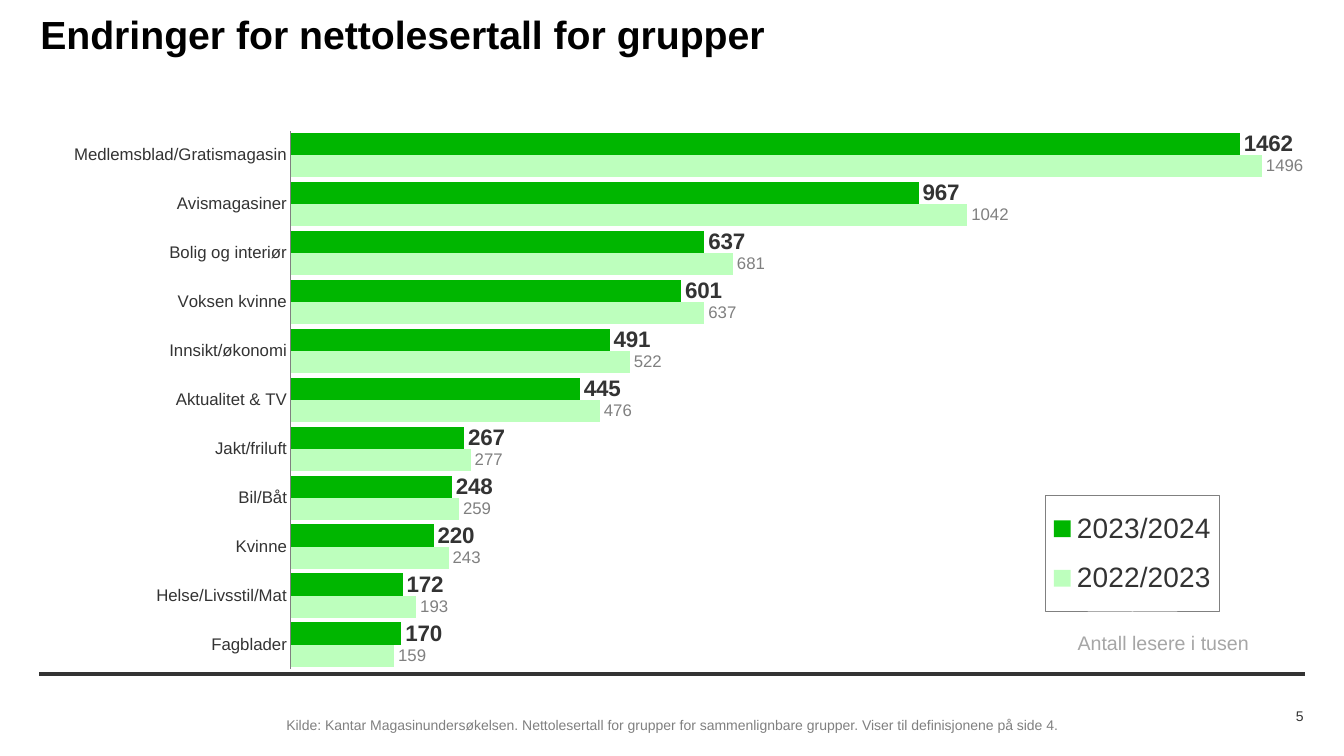
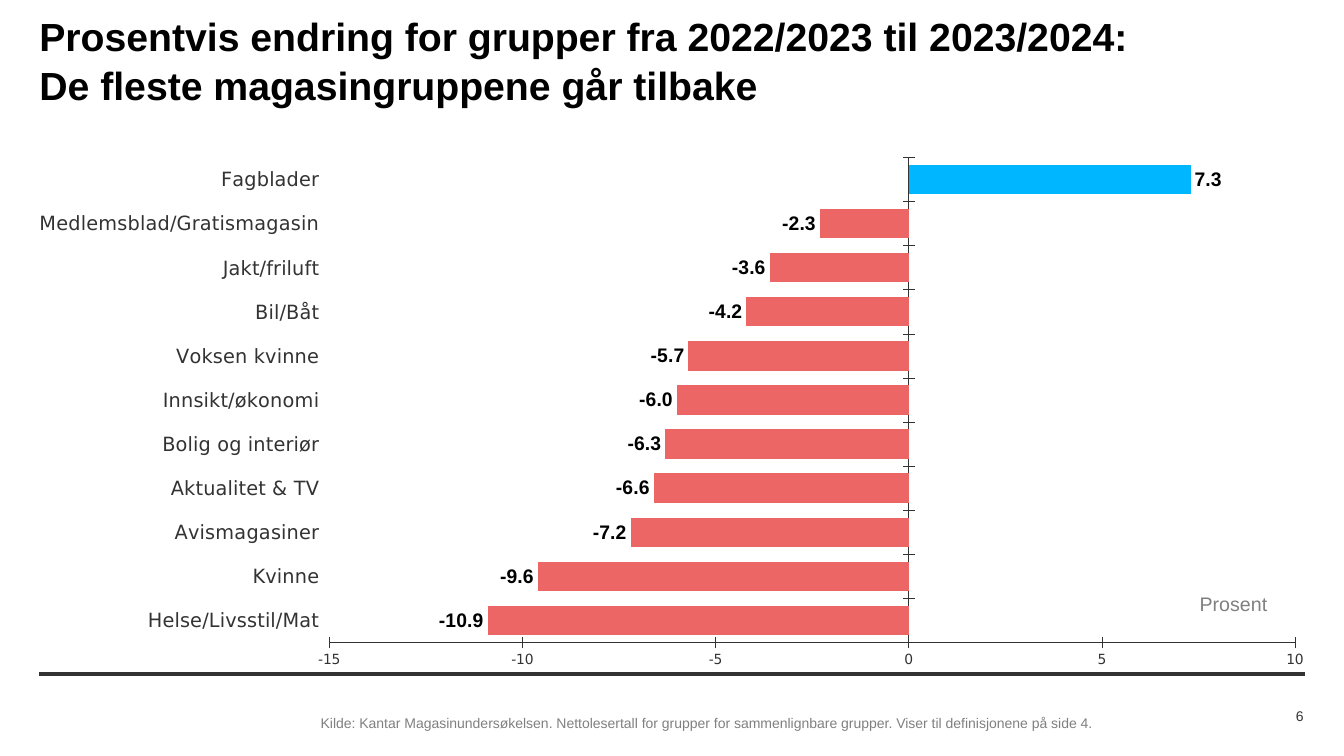
from typing import NamedTuple

from lxml import etree
from pptx import Presentation
from pptx.chart.data import CategoryChartData
from pptx.dml.color import RGBColor
from pptx.enum.chart import (XL_CHART_TYPE, XL_LABEL_POSITION, XL_LEGEND_POSITION,
                             XL_TICK_LABEL_POSITION, XL_TICK_MARK)
from pptx.enum.shapes import MSO_CONNECTOR
from pptx.enum.text import MSO_ANCHOR, PP_ALIGN
from pptx.oxml import parse_xml
from pptx.oxml.ns import nsdecls, qn
from pptx.util import Inches, Pt

BAR = XL_CHART_TYPE.BAR_CLUSTERED
OUTSIDE_END = XL_LABEL_POSITION.OUTSIDE_END
LEGEND_RIGHT = XL_LEGEND_POSITION.RIGHT
LABELS_LOW = XL_TICK_LABEL_POSITION.LOW
TICK_CROSS, TICK_NONE = XL_TICK_MARK.CROSS, XL_TICK_MARK.NONE
STRAIGHT = MSO_CONNECTOR.STRAIGHT
TOP, MIDDLE = MSO_ANCHOR.TOP, MSO_ANCHOR.MIDDLE
LEFT, RIGHT = PP_ALIGN.LEFT, PP_ALIGN.RIGHT

COLORS = {
    "title": "000000",
    "dark": "333333",
    "grey": "808080",
    "pale_grey": "A6A6A6",
    "current": "00B600",
    "previous": "BDFFBD",
    "decline": "ED6666",
    "growth": "00B6FF",
    "white": "FFFFFF",
}
FONT = "Arial"
AXIS_FONT = "DejaVu Sans"
TITLE_ONLY = 5
SOURCE = ("Kilde: Kantar Magasinundersøkelsen. Nettolesertall for grupper for "
          "sammenlignbare grupper. Viser til definisjonene på side 4.")

READERS = [
    ("Fagblader", 159, 170),
    ("Helse/Livsstil/Mat", 193, 172),
    ("Kvinne", 243, 220),
    ("Bil/Båt", 259, 248),
    ("Jakt/friluft", 277, 267),
    ("Aktualitet & TV", 476, 445),
    ("Innsikt/økonomi", 522, 491),
    ("Voksen kvinne", 637, 601),
    ("Bolig og interiør", 681, 637),
    ("Avismagasiner", 1042, 967),
    ("Medlemsblad/Gratismagasin", 1496, 1462),
]
CHANGES = [
    ("Helse/Livsstil/Mat", -10.9),
    ("Kvinne", -9.6),
    ("Avismagasiner", -7.2),
    ("Aktualitet & TV", -6.6),
    ("Bolig og interiør", -6.3),
    ("Innsikt/økonomi", -6),
    ("Voksen kvinne", -5.7),
    ("Bil/Båt", -4.2),
    ("Jakt/friluft", -3.6),
    ("Medlemsblad/Gratismagasin", -2.3),
    ("Fagblader", 7.3),
]


class Box(NamedTuple):
    left: int
    top: int
    width: int
    height: int

    def region(self, left, top, width, height):
        return Box(int(self.left + self.width * left / 100),
                   int(self.top + self.height * top / 100),
                   int(self.width * width / 100),
                   int(self.height * height / 100))


PAGE = Box(0, 0, Inches(13.33), Inches(7.5))


def rgb(name):
    return RGBColor.from_string(COLORS[name])


def style_font(font, size, color, bold=False, name=FONT):
    font.name = name
    font.size = Pt(size)
    font.bold = bold
    font.color.rgb = rgb(color)


def style_line(line, color, width):
    line.color.rgb = rgb(color)
    line.width = Pt(width)


def clear_margins(frame):
    frame.margin_left = frame.margin_right = 0
    frame.margin_top = frame.margin_bottom = 0


def add_text(slide, box, text, size, color, anchor=TOP, align=LEFT, inset=True, wrap=True):
    frame = slide.shapes.add_textbox(*box).text_frame
    frame.word_wrap = wrap
    frame.vertical_anchor = anchor
    if not inset:
        clear_margins(frame)
    frame.text = text
    paragraph = frame.paragraphs[0]
    paragraph.alignment = align
    style_font(paragraph.runs[0].font, size, color)


def add_title(slide, box, text):
    title = slide.shapes.title
    title.left, title.top, title.width, title.height = box
    frame = title.text_frame
    frame.word_wrap = True
    frame.vertical_anchor = TOP
    clear_margins(frame)
    frame.text = text
    paragraph = frame.paragraphs[0]
    paragraph.alignment = LEFT
    paragraph.line_spacing = 1.05
    for run in paragraph.runs:
        style_font(run.font, 28, "title", bold=True)


def add_footer(slide, source_box, page_number):
    rule = PAGE.region(2.93, 89.2, 94.14, 0)
    line = slide.shapes.add_connector(STRAIGHT, rule.left, rule.top,
                                      rule.left + rule.width, rule.top)
    style_line(line.line, "dark", 3)
    etree.SubElement(line.element.spPr, qn("a:effectLst"))
    add_text(slide, source_box, SOURCE, 10, "grey", anchor=MIDDLE, inset=False)
    add_text(slide, PAGE.region(89.05, 93.2, 7.95, 2.93), str(page_number), 10, "dark",
             anchor=MIDDLE, align=RIGHT, inset=False)


def set_layout(parent, index, shares, inner=False):
    for old in parent.findall(qn("c:layout")):
        parent.remove(old)
    target = '<c:layoutTarget val="inner"/>' if inner else ""
    modes = "".join(f'<c:{axis}Mode val="edge"/>' for axis in "xy")
    sizes = "".join(f'<c:{key} val="{share / 100}"/>' for key, share in zip("xywh", shares))
    parent.insert(index, parse_xml(
        f'<c:layout {nsdecls("c")}><c:manualLayout>{target}{modes}{sizes}'
        "</c:manualLayout></c:layout>"))


def add_bar_chart(slide, box, rows, names, gap, limits, plot_shares, number_format):
    data = CategoryChartData(number_format=number_format)
    categories, *columns = zip(*rows)
    data.categories = categories
    for name, values in zip(names, columns):
        data.add_series(name, values)
    chart = slide.shapes.add_chart(BAR, *box, data).chart
    style_font(chart.font, 14, "dark")
    chart.has_title = False
    chart.has_legend = False
    plot = chart.plots[0]
    plot.gap_width = gap
    plot.overlap = 0
    plot.vary_by_categories = False
    axis = chart.value_axis
    axis.minimum_scale, axis.maximum_scale = limits
    axis.has_major_gridlines = False
    chart.category_axis.has_major_gridlines = False
    set_layout(chart.element.find(".//" + qn("c:plotArea")), 0, plot_shares, inner=True)
    return chart


def style_series(series, fill, size, color, number_format, bold=False):
    series.invert_if_negative = False
    series.format.fill.solid()
    series.format.fill.fore_color.rgb = rgb(fill)
    labels = series.data_labels
    labels.show_value = True
    labels.position = OUTSIDE_END
    labels.number_format = number_format
    labels.number_format_is_linked = False
    style_font(labels.font, size, color, bold)


def add_legend(chart, shares):
    chart.has_legend = True
    legend = chart.legend
    legend.position = LEGEND_RIGHT
    legend.include_in_layout = True
    style_font(legend.font, 20, "dark")
    element = chart.element.find(".//" + qn("c:legend"))
    set_layout(element, 1, shares)
    element.find(qn("c:overlay")).addnext(parse_xml(
        f'<c:spPr {nsdecls("c", "a")}><a:solidFill><a:srgbClr val="{COLORS["white"]}"/>'
        f'</a:solidFill><a:ln w="{Pt(0.75)}"><a:solidFill><a:srgbClr val="{COLORS["grey"]}"/>'
        "</a:solidFill></a:ln></c:spPr>"))


def add_readers_chart(slide, box):
    chart = add_bar_chart(slide, box, READERS, ("2022/2023", "2023/2024"), 20,
                          (0, 1560), (19.9, 0, 80.1, 98.7), "0")
    chart.value_axis.visible = False
    axis = chart.category_axis
    axis.major_tick_mark = TICK_NONE
    style_font(axis.tick_labels.font, 12, "dark")
    style_line(axis.format.line, "grey", 0.75)
    previous, current = chart.plots[0].series
    style_series(previous, "previous", 12, "grey", "0")
    style_series(current, "current", 16, "dark", "0", bold=True)
    add_legend(chart, (79.56, 66.8, 13.8, 21.4))


def add_changes_chart(slide, box):
    chart = add_bar_chart(slide, box, CHANGES, ("Endring",), 50,
                          (-15, 10), (21.75, 0, 77.6, 94.4), "0.0")
    chart.value_axis.major_unit = 5
    for axis, size in ((chart.category_axis, 14), (chart.value_axis, 10)):
        axis.major_tick_mark = TICK_CROSS
        style_font(axis.tick_labels.font, size, "dark", name=AXIS_FONT)
        style_line(axis.format.line, "dark", 0.39)
    chart.category_axis.tick_label_position = LABELS_LOW
    labels = chart.value_axis.tick_labels
    labels.number_format = "0"
    labels.number_format_is_linked = False
    series = chart.plots[0].series[0]
    style_series(series, "decline", 14, "title", "0.0", bold=True)
    for index, (_, change) in enumerate(CHANGES):
        if change > 0:
            fill = series.points[index].format.fill
            fill.solid()
            fill.fore_color.rgb = rgb("growth")


def build_readers_slide(slide):
    add_title(slide, PAGE.region(3, 1.07, 94, 5.87), "Endringer for nettolesertall for grupper")
    add_readers_chart(slide, PAGE.region(2.93, 17.2, 94.07, 72.27))
    add_text(slide, PAGE.region(79.44, 82.8, 14.33, 4.53), "Antall lesere i tusen", 14,
             "pale_grey", wrap=False)
    add_footer(slide, PAGE.region(21.31, 93.2, 61, 5.47), 5)


def build_changes_slide(slide):
    add_title(slide, PAGE.region(2.93, 1.33, 96.9, 5.87),
              "Prosentvis endring for grupper fra 2022/2023 til 2023/2024:\v"
              "De fleste magasingruppene går tilbake")
    add_changes_chart(slide, PAGE.region(2.93, 20.8, 94.07, 68))
    add_text(slide, PAGE.region(88.52, 77.6, 10.13, 4.53), "Prosent", 14, "grey")
    add_footer(slide, PAGE.region(23.86, 92.93, 62.49, 5.47), 6)


def main():
    presentation = Presentation()
    presentation.slide_width = PAGE.width
    presentation.slide_height = PAGE.height
    layout = presentation.slide_layouts[TITLE_ONLY]
    for build in (build_readers_slide, build_changes_slide):
        build(presentation.slides.add_slide(layout))
    presentation.save("out.pptx")


if __name__ == "__main__":
    main()
